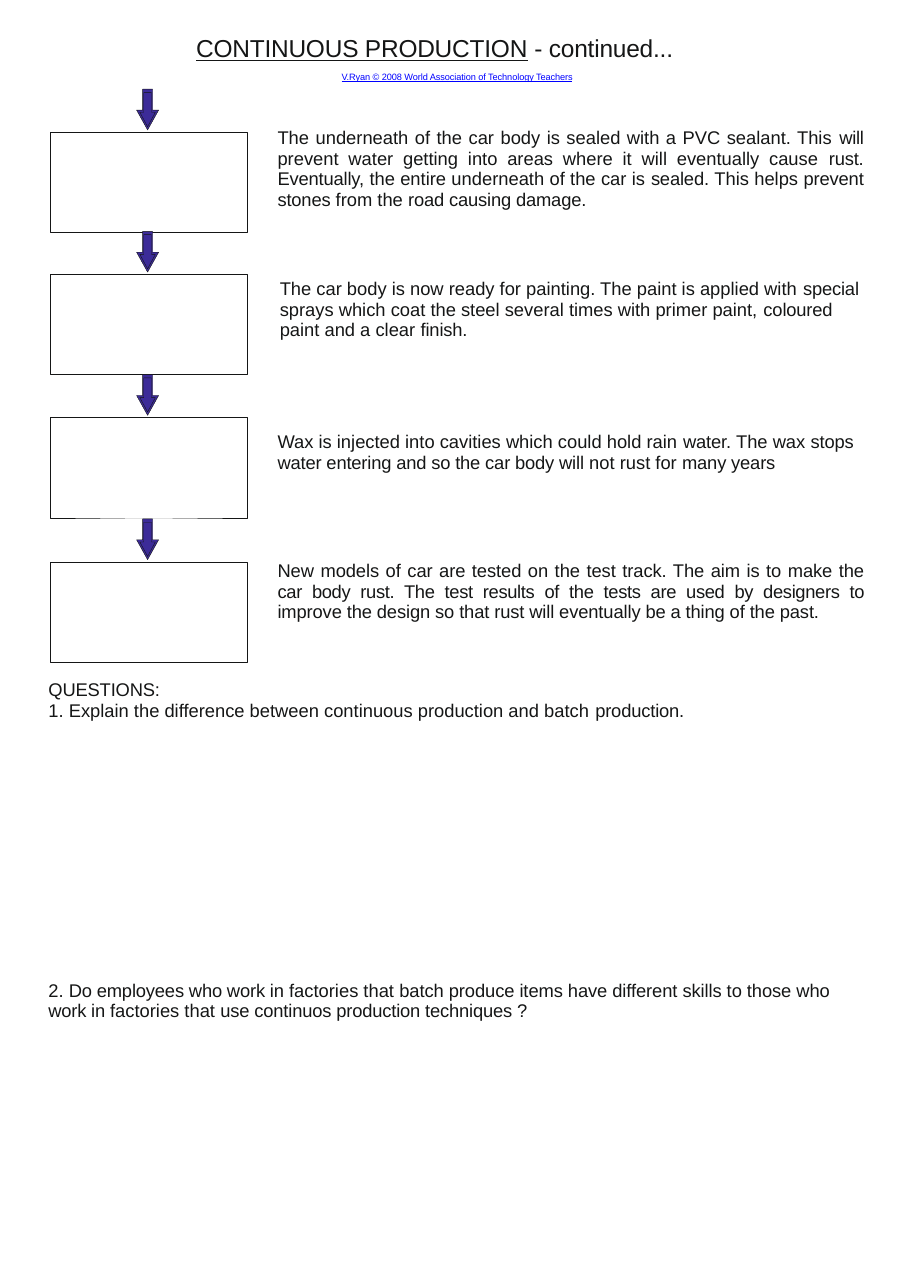
from pptx import Presentation
from pptx import util as u
from pptx.dml.color import RGBColor
from pptx.enum import shapes, text

PX = 9144
INK, ARROW, BLUE = "151616", "3C2B98", "0000FF"
LEFT, JUST = text.PP_ALIGN.LEFT, text.PP_ALIGN.JUSTIFY

STEPS = [
    (120, (251, 113, 533, 79), JUST, [
        ("The underneath of the car body is sealed with a PVC sealant. This ", 0),
        ("will ", -20),
        ("prevent water getting into areas where it will eventually cause ", 0),
        ("rust. Eventually, ", -10),
        ("the entire underneath of the car is ", 0),
        ("sealed. ", -10),
        ("This helps ", 0),
        ("prevent stones ", -10),
        ("from the ", 0),
        ("road causing damage.", -10)]),
    (249, (253, 250, 530, 60), LEFT, [
        ("The car body is now ready for painting. The paint is applied with ", 0),
        ("special ", -10),
        ("sprays which coat the steel several times with primer paint, ", 0),
        ("coloured ", -10),
        ("paint and a clear ", 0),
        ("finish.", -10)]),
    (379, (251, 389, 534, 41), LEFT, [
        ("Wax is injected into cavities which could hold rain ", 0),
        ("water. ", -10),
        ("The wax ", 0),
        ("stops water entering and so the car body will ", -10),
        ("not rust for ", 0),
        ("many years", -10)]),
    (510, (251, 506, 534, 60), JUST, [
        ("New models of car are tested on the test track. The aim is to make the ", -5),
        ("car body rust. The test results of the tests are used by designers to ", -24),
        ("improve the design so that rust will eventually be a thing of the past.", -8)]),
]


def px(n):
    return u.Emu(n * PX)


def rgb(code):
    return RGBColor.from_string(code)


def frame(slide, box, top=3):
    tf = slide.shapes.add_textbox(*map(px, box)).text_frame
    tf.word_wrap = True
    tf.margin_left = px(1)
    tf.margin_right = tf.margin_bottom = 0
    tf.margin_top = px(top)
    return tf


def write(para, runs, size=12, color=INK, line=None, align=LEFT):
    para.alignment = align
    if line:
        para.line_spacing = u.Pt(line)
    for words, gap, *under in runs:
        run = para.add_run()
        run.text = words
        font = run.font
        font.name, font.size = "Arial", u.Pt(size)
        font.color.rgb = rgb(color)
        font.underline = bool(under)
        run._r.get_or_add_rPr().set("spc", str(gap))


def shape(slide, kind, box, fill=None):
    item = slide.shapes.add_shape(kind, *map(px, box))
    item.shadow.inherit = False
    if fill:
        item.fill.solid()
        item.fill.fore_color.rgb = rgb(fill)
    else:
        item.fill.background()
    item.line.color.rgb = rgb(INK)
    item.line.width = u.Pt(0.25)
    return item


def arrow(slide, x, y, w, h):
    for inset, shaft, head in ((0, 0.45, 0.9), (3, 0.5, 0.93)):
        box = (x + inset, y + inset, w - 2 * inset, h - 2 * inset)
        item = shape(slide, shapes.MSO_SHAPE.DOWN_ARROW, box, ARROW)
        item.adjustments[0] = shaft
        item.adjustments[1] = head


def title(slide, box):
    tf = frame(slide, box, 1)
    write(tf.paragraphs[0], [("CONTINUOUS PRODUCTION", -10, True),
                             (" - continued...", -10)], 16)
    para = tf.add_paragraph()
    para.space_before = u.Pt(5.8)
    para._p.get_or_add_pPr().set("marL", str(px(132)))
    write(para, [("V.Ryan © 2008 World Association of Technology Teachers", -5, True)],
          6, BLUE)


def step(slide, box, area, align, runs):
    x, y, w, h = box
    arrow(slide, x + 78, y - 39, 20, 37)
    shape(slide, shapes.MSO_SHAPE.RECTANGLE, box)
    write(frame(slide, area).paragraphs[0], runs, line=13.4, align=align)


def first(slide, box):
    tf = frame(slide, box)
    write(tf.paragraphs[0], [("QUESTIONS:", -10)], line=13.9)
    write(tf.add_paragraph(), [
        ("1. Explain the difference between continuous production and batch ", 0),
        ("production.", -10)], line=13.9)


def second(slide, box):
    write(frame(slide, box).paragraphs[0], [
        ("2. ", 0),
        ("Do employees who work in ", -10),
        ("factories that ", 0),
        ("batch produce items have different skills to those who ", -7),
        ("work in ", -15),
        ("factories that ", 0),
        ("use continuos production techniques ?", -10)], line=13.4)


def main():
    deck = Presentation()
    deck.slide_width, deck.slide_height = px(826), px(1169)
    slide = deck.slides.add_slide(deck.slide_layouts[6])
    title(slide, (177, 29, 442, 48))
    for top, area, align, runs in STEPS:
        step(slide, (46, top, 178, 91), area, align, runs)
    first(slide, (43, 613, 742, 42))
    second(slide, (43, 887, 740, 41))
    deck.save("out.pptx")


if __name__ == "__main__":
    main()
